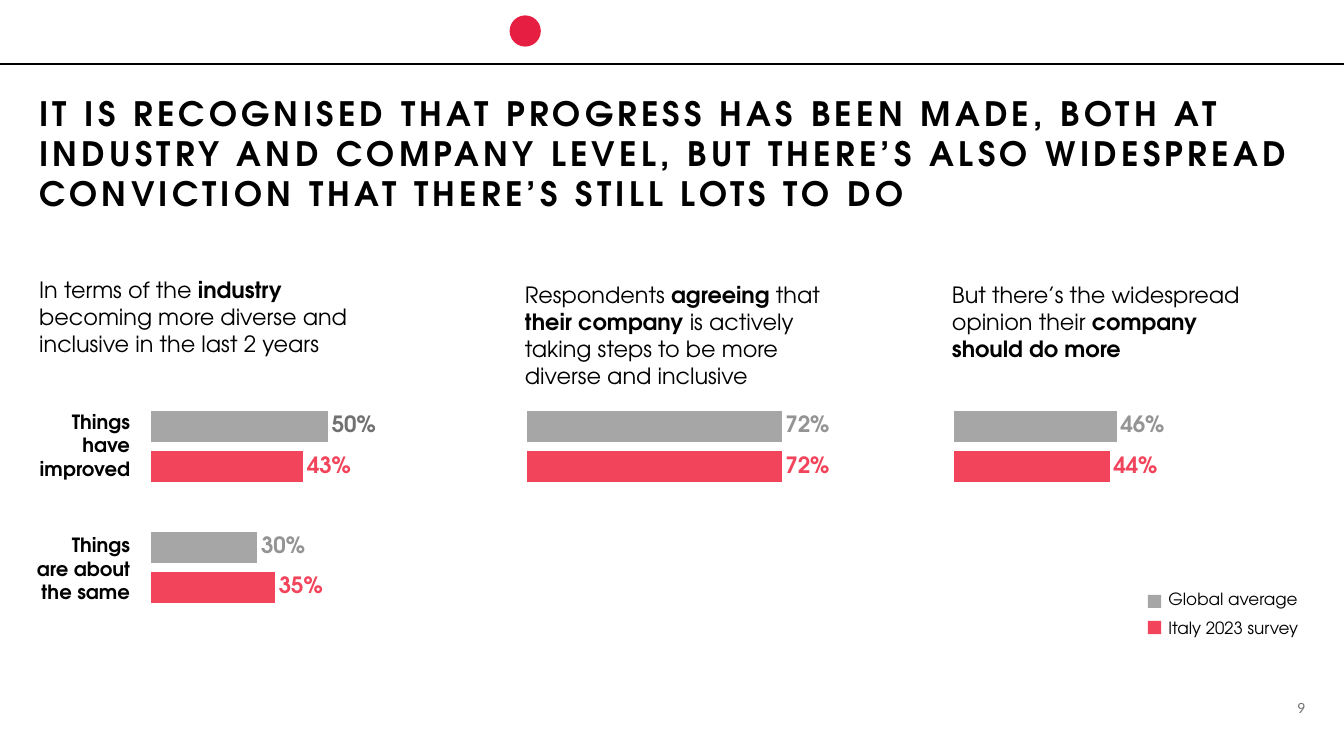
from lxml import etree
from pptx import Presentation
from pptx.chart.data import CategoryChartData
from pptx.dml.color import RGBColor
from pptx.enum.chart import XL_CHART_TYPE as CHART, XL_LABEL_POSITION as LABEL
from pptx.enum.shapes import MSO_CONNECTOR as CONN, MSO_SHAPE as SHAPE
from pptx.enum.text import MSO_ANCHOR as ANCHOR, MSO_AUTO_SIZE as FIT, PP_ALIGN as ALIGN
from pptx.oxml import parse_xml
from pptx.oxml.ns import nsdecls, qn
from pptx.util import Pt

BLACK = RGBColor(0, 0, 0)
DOT_RED = RGBColor(0xE5, 0x1E, 0x42)
RED = RGBColor(0xF2, 0x44, 0x5B)
GREY = RGBColor(0xA6, 0xA6, 0xA6)
LABEL_GREY = RGBColor(0x94, 0x94, 0x94)
DARK_GREY = RGBColor(0x71, 0x71, 0x71)
HEAD_FONT, BODY_FONT = "TeX Gyre Adventor", "Lato"

SLIDE_W, SLIDE_H = 960, 540
CHART_W, CHART_H = 339.8, 141.8
PLOT = {"x": 0.22, "y": 0.067, "w": 0.743, "h": 0.768}
CHART_TOP, GROUP_PITCH = 255, 86.4
HEADING_TOP = 197.3


def format_font(font, size, color, name=HEAD_FONT, bold=False):
    font.size, font.name, font.bold = Pt(size), name, bold
    font.color.rgb = color


def write(tf, paragraphs, size=16, color=BLACK, name=HEAD_FONT, bold=False,
          align=ALIGN.LEFT, before=0, insets=(7.2, 3.6, 7.2, 3.6),
          anchor=ANCHOR.TOP, spacing=None):
    """Fill a text frame; text between * marks within a paragraph is bold."""
    tf.word_wrap, tf.auto_size, tf.vertical_anchor = True, FIT.NONE, anchor
    tf.margin_left, tf.margin_top, tf.margin_right, tf.margin_bottom = map(Pt, insets)
    for i, text in enumerate(paragraphs):
        p = tf.add_paragraph() if i else tf.paragraphs[0]
        p.alignment, p.space_before = align, Pt(before)
        for j, part in enumerate(text.split("*")):
            if part:
                r = p.add_run()
                r.text = part
                format_font(r.font, size, color, name, bold or j % 2 == 1)
                if spacing:
                    r.font._element.set("spc", str(spacing * 100))


def add_text(s, box, *paragraphs, **fmt):
    write(s.shapes.add_textbox(*map(Pt, box)).text_frame, paragraphs, **fmt)


def add_solid(s, kind, box, color):
    sp = s.shapes.add_shape(kind, *map(Pt, box))
    sp.shadow.inherit = False
    sp.fill.solid()
    sp.fill.fore_color.rgb = color
    sp.line.fill.background()


def header(s, title):
    rule = s.shapes.add_connector(CONN.STRAIGHT, 0, Pt(45.5), Pt(SLIDE_W), Pt(45.5))
    rule.line.color.rgb, rule.line.width = BLACK, Pt(1.5)
    etree.SubElement(rule._element.spPr, qn("a:effectLst"))
    add_solid(s, SHAPE.OVAL, (364, 11, 22.3, 22.3), DOT_RED)
    sp = s.shapes.title
    sp.left, sp.top, sp.width, sp.height = map(Pt, (28, 62.6, 903, 98))
    write(sp.text_frame, [title], size=24, bold=True, before=6, spacing=3,
          insets=(0, 3.6, 7.2, 3.6))


def bar_pair(s, left, top, category, survey, average, average_color=LABEL_GREY):
    """Two bars whose plot area begins at left."""
    data = CategoryChartData(number_format="0%")
    data.categories = [category]
    data.add_series("Italy 2023 survey", [survey])
    data.add_series("Global average", [average])
    box = (left - PLOT["x"] * CHART_W, top, CHART_W, CHART_H)
    chart = s.shapes.add_chart(CHART.BAR_CLUSTERED, *map(Pt, box), data).chart
    chart.has_legend = chart.has_title = False
    format_font(chart.font, 10, DARK_GREY, BODY_FONT)
    for axis in (chart.category_axis, chart.value_axis):
        axis.visible = axis.has_major_gridlines = False
    chart.value_axis.minimum_scale, chart.value_axis.maximum_scale = 0, 1
    plot = chart.plots[0]
    plot.gap_width, plot.overlap, plot.vary_by_categories = 260, -30, False
    for series, fill, color in zip(plot.series, (RED, GREY), (RED, average_color)):
        series.format.fill.solid()
        series.format.fill.fore_color.rgb = fill
        labels = series.data_labels
        labels.show_value, labels.position = True, LABEL.OUTSIDE_END
        labels.number_format, labels.number_format_is_linked = "0%", False
        format_font(labels.font, 16, color, bold=True)
    place_plot(chart)


def place_plot(chart):
    area = chart._chartSpace.chart.plotArea
    for old in area.findall(qn("c:layout")):
        area.remove(old)
    sizes = "".join(f'<c:{k} val="{v}"/>' for k, v in PLOT.items())
    area.insert(0, parse_xml(
        f'<c:layout {nsdecls("c")}><c:manualLayout><c:layoutTarget val="inner"/>'
        f'<c:xMode val="edge"/><c:yMode val="edge"/>{sizes}</c:manualLayout></c:layout>'))


def industry_column(s, left, heading, groups):
    add_text(s, (left, HEADING_TOP, 245, 72), heading, before=6, insets=(0, 0, 0, 0))
    for i, (label, *values) in enumerate(groups):
        top = CHART_TOP + i * GROUP_PITCH
        bar_pair(s, left + 80, top, label, *values)
        add_text(s, (left - 10, top + 34 + 2 * i, 82, 58), label, size=14,
                 bold=True, align=ALIGN.RIGHT)


def company_column(s, left, heading, survey, average):
    add_text(s, (left, HEADING_TOP, 227.5, 85), heading, before=6,
             insets=(0, 3.6, 7.2, 3.6))
    bar_pair(s, left + 1.5, CHART_TOP, "Company", survey, average)


def legend(s, left, top):
    add_text(s, (left + 14.5, top, 112, 34), "Global average", "Italy 2023 survey",
             size=12, before=6, insets=(0, 0, 0, 0))
    for i, color in enumerate((GREY, RED)):
        add_solid(s, SHAPE.RECTANGLE, (left, top + 4.4 + 18.7 * i, 9.4, 9.4), color)


def main():
    prs = Presentation()
    prs.slide_width, prs.slide_height = Pt(SLIDE_W), Pt(SLIDE_H)
    s = prs.slides.add_slide(prs.slide_layouts[5])
    header(s, "IT IS RECOGNISED THAT PROGRESS HAS BEEN MADE, BOTH AT INDUSTRY AND "
              "COMPANY LEVEL, BUT THERE’S ALSO WIDESPREAD CONVICTION THAT THERE’S "
              "STILL LOTS TO DO")
    industry_column(
        s, 28, "In terms of the *industry* becoming more diverse and inclusive "
               "in the last 2 years",
        [("Things have improved", 0.43, 0.50, DARK_GREY),
         ("Things are about the same", 0.35, 0.30)])
    company_column(
        s, 375, "Respondents *agreeing* that *their company* is actively taking "
                "steps to be more diverse and inclusive", 0.72, 0.72)
    company_column(
        s, 680, "But there’s the widespread opinion their *company should do more*",
        0.44, 0.46)
    legend(s, 820, 420.5)
    add_text(s, (856, 497.5, 76.5, 16), "9", size=10, color=DARK_GREY, name=BODY_FONT,
             align=ALIGN.RIGHT, anchor=ANCHOR.MIDDLE, insets=(0, 0, 0, 0))
    prs.save("out.pptx")


if __name__ == "__main__":
    main()
